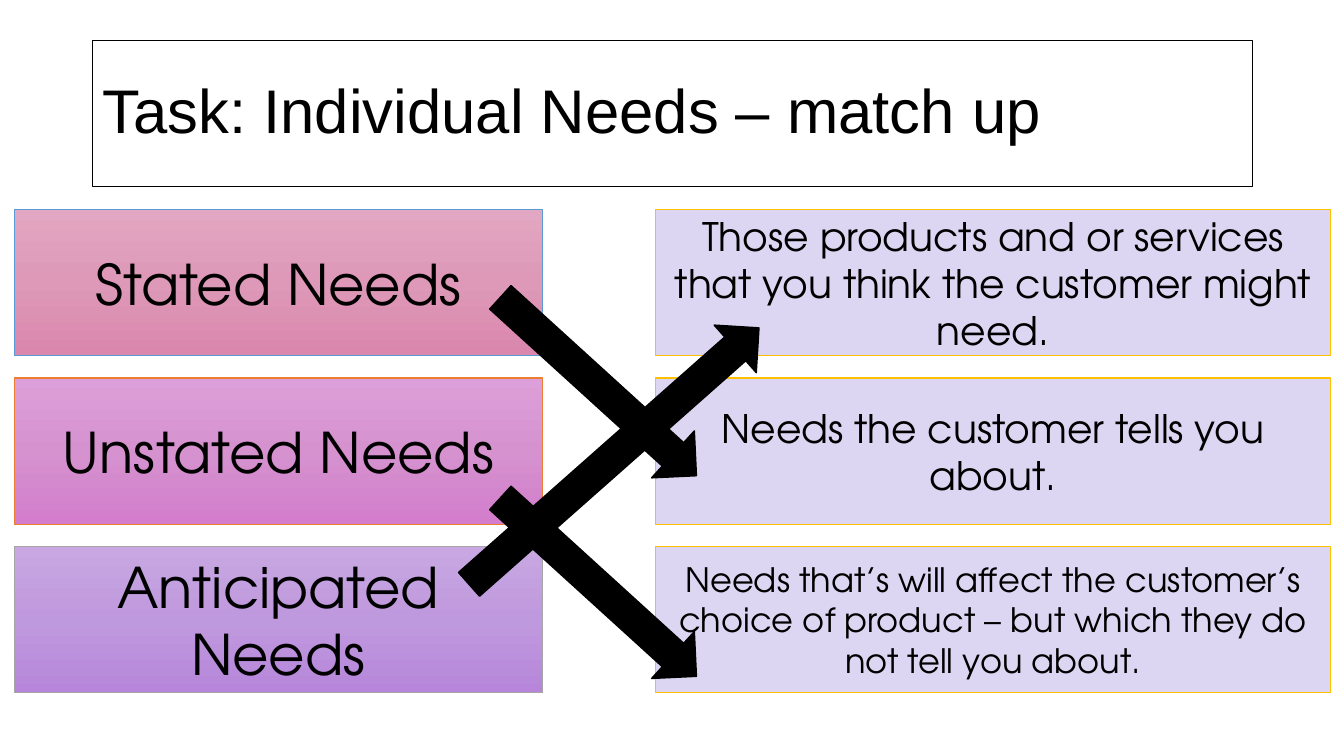
from copy import deepcopy

from pptx import Presentation
from pptx.dml.color import RGBColor
from pptx.enum.shapes import MSO_SHAPE
from pptx.enum.text import MSO_ANCHOR, MSO_AUTO_SIZE, PP_ALIGN
from pptx.oxml.ns import qn
from pptx.util import Inches, Pt

RECT = MSO_SHAPE.RECTANGLE
ARROW = MSO_SHAPE.RIGHT_ARROW
MIDDLE = MSO_ANCHOR.MIDDLE
NO_FIT = MSO_AUTO_SIZE.NONE
LEFT, CENTER = PP_ALIGN.LEFT, PP_ALIGN.CENTER

BODY_FONT = "TeX Gyre Adventor"
BLACK, LILAC, GOLD = "000000", "DDD6F2", "FFC000"
ROW_H, ROW_STEP = 1.45, 1.67

NEEDS = [
    ("Stated Needs", ("E2A7C2", "DD99B7", "DB86AD"), "5B9BD5"),
    ("Unstated Needs", ("DD9FD9", "D592CF", "D37DCC"), "ED7D31"),
    ("Anticipated Needs", ("C8A7E2", "BF99DD", "B786DB"), "A5A5A5"),
]
MEANINGS = [
    ("Those products and or services that you think the customer might need.", 28),
    ("Needs the customer tells you about.", 28),
    ("Needs that’s will affect the customer’s choice of product – "
     "but which they do not tell you about.", 24),
]
ARROWS = [
    (4.62, 3.52, 2.63, 42.3),
    (4.62, 5.51, 2.63, 42.3),
    (4.17, 4.21, 3.84, 318.5),
]


def color(value):
    return RGBColor.from_string(value)


def set_line(sp, value, width):
    sp.line.color.rgb = color(value)
    sp.line.width = Pt(width)


def set_text(sp, text, size, font, align):
    tf = sp.text_frame
    tf.word_wrap = True
    tf.auto_size = NO_FIT
    tf.vertical_anchor = MIDDLE
    p = tf.paragraphs[0]
    p.alignment = align
    r = p.add_run()
    r.text = text
    r.font.size = Pt(size)
    r.font.name = font
    r.font.color.rgb = color(BLACK)
    return p


def set_gradient(sp, stops):
    sp.fill.gradient()
    sp.fill.gradient_angle = 270
    first = sp._element.spPr.find(f".//{qn('a:gs')}")
    first.addnext(deepcopy(first))
    for i, (stop, value) in enumerate(zip(sp.fill.gradient_stops, stops)):
        stop.color.rgb = color(value)
        stop.position = i / 2


def add_shape(s, kind, x, y, w, h):
    sp = s.shapes.add_shape(kind, Inches(x), Inches(y), Inches(w), Inches(h))
    sp.shadow.inherit = False
    return sp


def add_title(s, x, y, w, h):
    sp = s.shapes.title
    sp.left, sp.top, sp.width, sp.height = map(Inches, (x, y, w, h))
    set_line(sp, BLACK, 0.75)
    p = set_text(sp, "Task: Individual Needs – match up", 44, "Arial", LEFT)
    p.line_spacing = 0.9


def add_needs(s, x, y, w):
    for i, (text, stops, border) in enumerate(NEEDS):
        sp = add_shape(s, RECT, x, y + i * ROW_STEP, w, ROW_H)
        set_gradient(sp, stops)
        set_line(sp, border, 0.75)
        set_text(sp, text, 40, BODY_FONT, CENTER)


def add_meanings(s, x, y, w):
    for i, (text, size) in enumerate(MEANINGS):
        sp = add_shape(s, RECT, x, y + i * ROW_STEP, w, ROW_H)
        sp.fill.solid()
        sp.fill.fore_color.rgb = color(LILAC)
        set_line(sp, GOLD, 0.75)
        set_text(sp, text, size, BODY_FONT, CENTER)


def add_arrows(s):
    for x, y, w, angle in ARROWS:
        sp = add_shape(s, ARROW, x, y, w, 0.63)
        sp.rotation = angle
        sp.fill.solid()
        sp.fill.fore_color.rgb = color(BLACK)
        set_line(sp, BLACK, 1)


def main():
    prs = Presentation()
    prs.slide_width, prs.slide_height = Inches(13.33), Inches(7.5)
    s = prs.slides.add_slide(prs.slide_layouts.get_by_name("Title Only"))
    add_title(s, 0.92, 0.4, 11.5, 1.45)
    add_needs(s, 0.14, 2.08, 5.24)
    add_meanings(s, 6.5, 2.08, 6.7)
    add_arrows(s)
    prs.save("out.pptx")


if __name__ == "__main__":
    main()
